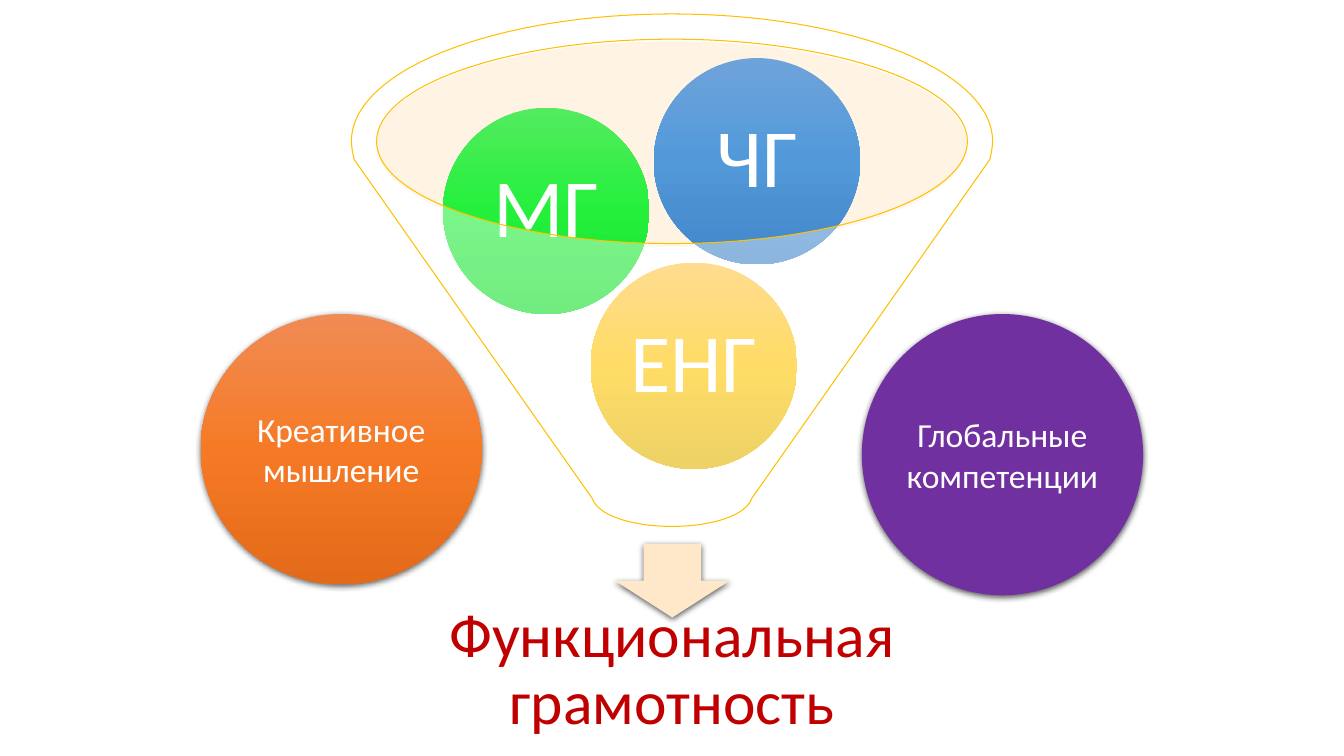
from copy import deepcopy
from math import cos, radians, sin, tan

from lxml import etree
from pptx import Presentation
from pptx.dml.color import RGBColor
from pptx.enum import shapes, text
from pptx.oxml import ns
from pptx.util import Pt

COLORS = {
    "mouth": "FFE2BA", "arrow": "FFE8CA", "title": "C00000", "white": "FFFFFF",
    "outline": "FFC000", "purple": "7030A0",
    "yellow": ("FFC647", "FFC600", "E3B400"),
    "green": ("53EB5F", "24F03B", "15DE2C"),
    "blue": ("6EA3DA", "5299DA", "4186C8"),
    "orange": ("F08B54", "F67A26", "E36A18"),
}
TITLE = "Функциональная грамотность"
TITLE_BOX = (284, 430.5, 392.4, 97.9)
MOUTH_BOX = (268.7, 29.5, 421.9, 146.9)
ARROW_BOX = (439.2, 388.5, 82.1, 52.6)
BALL_SIZE = 147.4
BALLS = [
    ("ЕНГ", 421.9, 187.6, "yellow"),
    ("МГ", 316.5, 77, "green"),
    ("ЧГ", 467, 41.5, "blue"),
]
SIDE_CIRCLES = [
    ("Глобальные компетенции", (615.6, 224.3, 200.9, 200.9), "purple", 0),
    ("Креативное мышление", (143.3, 224.3, 200.9, 193), "orange", 7.2),
]
CENTER = 480
RIM = (101, 229, 91.5, (172, 180, 270, 360, 368))
SPOUT = (353, 57.5, 23, (8, 90, 172))
OPENING = (101, 210.6, 73, (180, 90, 0, -90, -180))


def add_effects(shape, shadow):
    shape.shadow.inherit = False
    if not shadow:
        return
    effects = shape._element.spPr.find(ns.qn("a:effectLst"))
    outer = etree.SubElement(effects, ns.qn("a:outerShdw"), blurRad=str(Pt(4.5)),
                             dist=str(Pt(1.5)), dir="5400000", rotWithShape="0")
    black = etree.SubElement(outer, ns.qn("a:srgbClr"), val="000000")
    etree.SubElement(black, ns.qn("a:alpha"), val="63000")


def paint(shape, color, opacity=None):
    value = COLORS[color]
    if isinstance(value, tuple):
        shape.fill.gradient()
        shape.fill.gradient_angle = 270
        stops = shape._element.spPr.find(".//" + ns.qn("a:gsLst"))
        stops.insert(1, deepcopy(stops[0]))
        for stop, position, shade in zip(shape.fill.gradient_stops, (0, 0.5, 1), value):
            stop.color.rgb = RGBColor.from_string(shade)
            stop.position = position
    else:
        shape.fill.solid()
        shape.fill.fore_color.rgb = RGBColor.from_string(value)
    if opacity:
        solid = shape._element.spPr.find(ns.qn("a:solidFill"))
        etree.SubElement(solid[0], ns.qn("a:alpha"), val=str(opacity * 1000))


def write(shape, words, size, color, margins, spacing=1.0):
    frame = shape.text_frame
    frame.text = words
    horizontal, vertical = margins
    frame_format = {
        "word_wrap": True, "auto_size": text.MSO_AUTO_SIZE.NONE,
        "vertical_anchor": text.MSO_ANCHOR.MIDDLE,
        "margin_left": Pt(horizontal), "margin_right": Pt(horizontal),
        "margin_top": Pt(vertical), "margin_bottom": Pt(vertical),
    }
    paragraph = frame.paragraphs[0]
    paragraph_format = {"alignment": text.PP_ALIGN.CENTER, "line_spacing": spacing,
                        "space_before": Pt(0)}
    font = paragraph.runs[0].font
    font_format = {"name": "Calibri", "size": Pt(size)}
    for target, values in ((frame, frame_format), (paragraph, paragraph_format),
                           (font, font_format)):
        for name, value in values.items():
            setattr(target, name, value)
    font.color.rgb = RGBColor.from_string(COLORS[color])


def add_preset(slide, kind, box, color, shadow=False, opacity=None):
    shape = slide.shapes.add_shape(kind, *map(Pt, box))
    paint(shape, color, opacity)
    shape.line.fill.background()
    add_effects(shape, shadow)
    return shape


def arc(center_y, radius_x, radius_y, angles):
    def point(angle, pull):
        return (CENTER + radius_x * (cos(angle) - pull * sin(angle)),
                center_y + radius_y * (sin(angle) + pull * cos(angle)))

    turns = [radians(angle) for angle in angles]
    points = [point(turns[0], 0)]
    for start, end in zip(turns, turns[1:]):
        pull = 4 / 3 * tan((end - start) / 4)
        points += [point(start, pull), point(end, -pull), point(end, 0)]
    return points


def add_funnel(slide):
    rim, spout, opening = arc(*RIM), arc(*SPOUT), arc(*OPENING)
    builder = slide.shapes.build_freeform(*rim[0], scale=Pt(1))
    builder.add_line_segments(rim[1:] + spout, close=True)
    builder.move_to(*opening[0])
    builder.add_line_segments(opening[1:], close=True)
    funnel = builder.convert_to_shape()

    outline = funnel._element.spPr.find(".//" + ns.qn("a:path"))
    segments = outline.findall(ns.qn("a:lnTo"))
    del segments[len(rim) - 1]
    for first in range(0, len(segments), 3):
        curve = etree.SubElement(outline, ns.qn("a:cubicBezTo"))
        segments[first].addprevious(curve)
        for segment in segments[first:first + 3]:
            curve.append(segment[0])
            outline.remove(segment)

    paint(funnel, "white", 40)
    funnel.line.color.rgb = RGBColor.from_string(COLORS["outline"])
    funnel.line.width = Pt(0.75)
    add_effects(funnel, False)


def main():
    presentation = Presentation()
    presentation.slide_width, presentation.slide_height = Pt(960), Pt(540)
    slide = presentation.slides.add_slide(presentation.slide_layouts[5])
    ellipse = shapes.MSO_SHAPE.OVAL

    title = slide.shapes.title
    for name, value in zip(("left", "top", "width", "height"), TITLE_BOX):
        setattr(title, name, Pt(value))
    write(title, TITLE, 44, "title", (24.5, 24.5), 0.9)

    add_preset(slide, ellipse, MOUTH_BOX, "mouth", opacity=40)
    add_preset(slide, shapes.MSO_SHAPE.DOWN_ARROW, ARROW_BOX, "arrow", shadow=True)
    for words, left, top, color in BALLS:
        ball = add_preset(slide, ellipse, (left, top, BALL_SIZE, BALL_SIZE), color)
        write(ball, words, 59, "white", (5.8, 5.8), 0.9)
    add_funnel(slide)
    for words, box, color, margin in SIDE_CIRCLES:
        circle = add_preset(slide, ellipse, box, color, shadow=True)
        write(circle, words, 24, "white", (margin, margin / 2))

    presentation.save("out.pptx")


if __name__ == "__main__":
    main()
